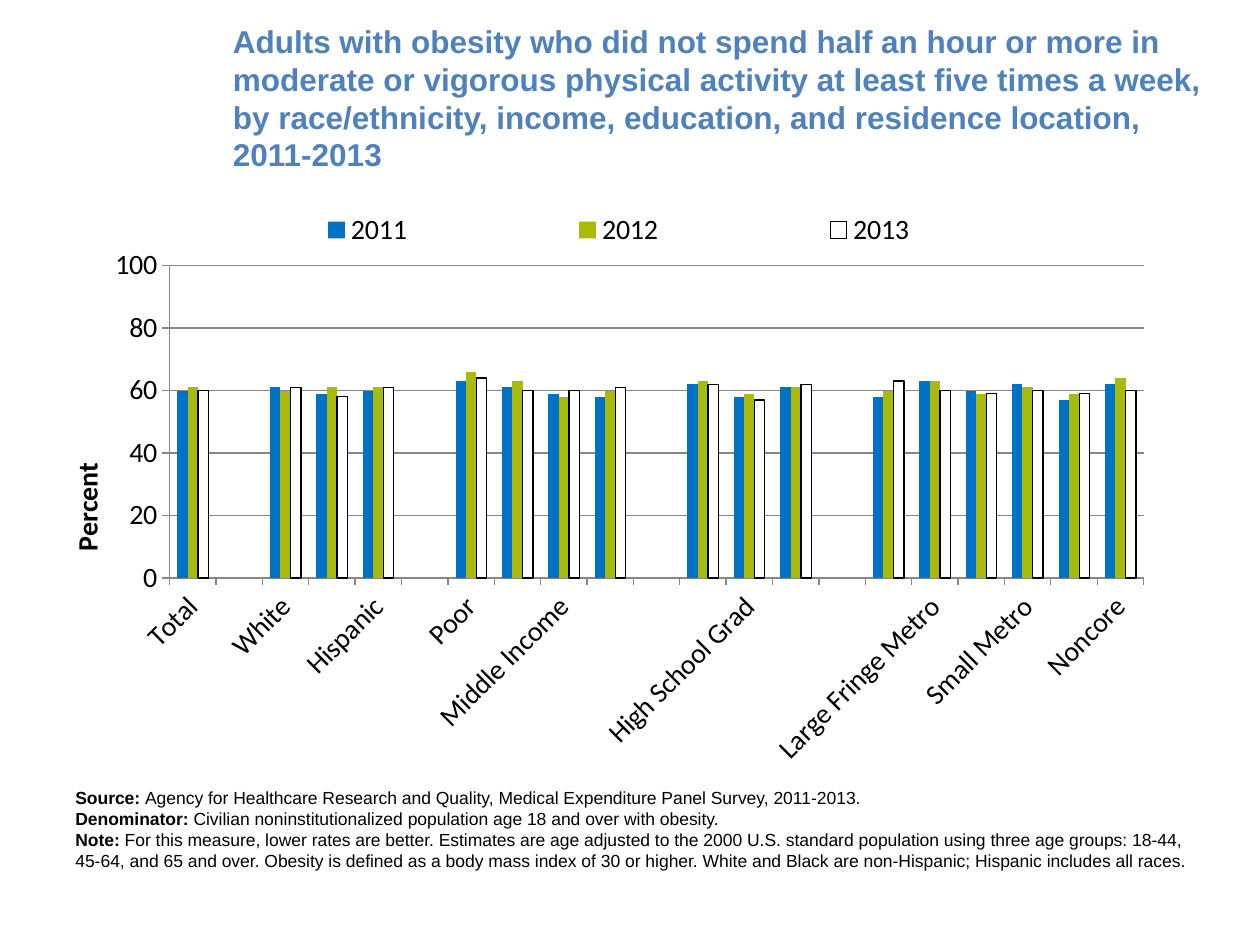
from lxml import etree
from pptx import Presentation
from pptx import util as u
from pptx.chart.data import CategoryChartData
from pptx.dml.color import RGBColor
from pptx.enum import chart as ch
from pptx.enum import text
from pptx.oxml.ns import qn

COLORS = {"title": "4F81BD", "black": "000000", "white": "FFFFFF",
          "2011": "0072C6", "2012": "AABA0A", "2013": "FFFFFF", "grid": "868686"}

TITLE = ("Adults with obesity who did not spend half an hour or more in moderate or "
         "vigorous physical activity at least five times a week, by race/ethnicity, "
         "income, education, and residence location, 2011-2013")

NOTES = [
    ("Source: ", "Agency for Healthcare Research and Quality, Medical Expenditure "
     "Panel Survey, 2011-2013."),
    ("Denominator: ", "Civilian noninstitutionalized population age 18 and over with obesity."),
    ("Note: ", "For this measure, lower rates are better. Estimates are age adjusted to the "
     "2000 U.S. standard population using three age groups: 18-44, 45-64, and 65 and over. "
     "Obesity is defined as a body mass index of 30 or higher. White and Black are "
     "non-Hispanic; Hispanic includes all races."),
]

YEARS = ["2011", "2012", "2013"]
# Each group holds rows of label and one percentage per year.
GROUPS = [
    [("Total", 60, 61, 60)],
    [("White", 61, 60, 61), ("Black", 59, 61, 58), ("Hispanic", 60, 61, 61)],
    [("Poor", 63, 66, 64), ("Low Income", 61, 63, 60),
     ("Middle Income", 59, 58, 60), ("High Income", 58, 60, 61)],
    [("<High School", 62, 63, 62), ("High School Grad", 58, 59, 57),
     ("Any College", 61, 61, 62)],
    [("Large Cental Metro", 58, 60, 63), ("Large Fringe Metro", 63, 63, 60),
     ("Medium Metro", 60, 59, 59), ("Small Metro", 62, 61, 60),
     ("Micropolitan", 57, 59, 59), ("Noncore", 62, 64, 60)],
]


def rgb(name):
    return RGBColor.from_string(COLORS[name])


def set_font(font, size, name="Calibri", color="black", bold=False):
    font.size, font.name, font.bold = u.Pt(size), name, bold
    font.color.rgb = rgb(color)


def add_run(p, content, **fmt):
    r = p.add_run()
    r.text = content
    set_font(r.font, **fmt)


def add_text(s, box, paragraphs, anchor=text.MSO_ANCHOR.TOP, **fmt):
    """Add a text box; each paragraph is a list of (text, bold) runs."""
    tf = s.shapes.add_textbox(*map(u.Inches, box)).text_frame
    tf.word_wrap = True
    tf.vertical_anchor = anchor
    for i, runs in enumerate(paragraphs):
        p = tf.paragraphs[0] if i == 0 else tf.add_paragraph()
        for content, bold in runs:
            add_run(p, content, bold=bold, **fmt)


def set_layout(parent, x, y, w, h, inner=False):
    """Place a chart part by fractions of the chart area."""
    layout = parent.find(qn("c:layout"))
    if layout is None:
        layout = etree.Element(qn("c:layout"))
        before = parent.find(qn("c:legendPos"))
        if before is None:
            parent.insert(0, layout)
        else:
            before.addnext(layout)
    manual = etree.SubElement(layout, qn("c:manualLayout"))
    values = [("layoutTarget", "inner")] if inner else []
    values += [("xMode", "edge"), ("yMode", "edge"), ("x", x), ("y", y), ("w", w), ("h", h)]
    for tag, value in values:
        etree.SubElement(manual, qn(f"c:{tag}")).set("val", str(value))


def chart_data():
    rows = []
    for group in GROUPS:
        if rows:
            rows.append(("",) + (None,) * len(YEARS))
        rows += group
    labels, *columns = zip(*rows)
    data = CategoryChartData(number_format="0")
    data.categories = labels
    for year, values in zip(YEARS, columns):
        data.add_series(year, values)
    return data


def style_axes(chart):
    for axis in (chart.category_axis, chart.value_axis):
        set_font(axis.tick_labels.font, 16)
        axis.major_tick_mark = ch.XL_TICK_MARK.OUTSIDE
        axis.format.line.color.rgb = rgb("grid")
    axis = chart.value_axis
    axis.minimum_scale, axis.maximum_scale, axis.major_unit = 0, 100, 20
    axis.tick_labels.number_format = "0"
    axis.tick_labels.number_format_is_linked = False
    axis.has_major_gridlines = True
    axis.major_gridlines.format.line.color.rgb = rgb("grid")
    add_run(axis.axis_title.text_frame.paragraphs[0], "Percent", size=16, bold=True)


def add_column_chart(s, box):
    chart = s.shapes.add_chart(ch.XL_CHART_TYPE.COLUMN_CLUSTERED,
                               *map(u.Inches, box), chart_data()).chart
    set_font(chart.font, 10, "Arial")
    chart.has_title = False
    chart.has_legend = True
    chart.legend.position = ch.XL_LEGEND_POSITION.TOP
    chart.legend.include_in_layout = False
    set_font(chart.legend.font, 16)
    style_axes(chart)
    plot = chart.plots[0]
    plot.gap_width, plot.overlap, plot.vary_by_categories = 150, 0, False
    for series in plot.series:
        series.invert_if_negative = False
        series.format.fill.solid()
        series.format.fill.fore_color.rgb = rgb(series.name)
    outline = plot.series[-1].format.line
    outline.color.rgb, outline.width = rgb("black"), u.Pt(0.75)
    set_layout(chart.element.find(".//" + qn("c:plotArea")), 0.094, 0.113, 0.859, 0.551, True)
    set_layout(chart.element.find(".//" + qn("c:legend")), 0.09, 0.01, 0.8, 0.08)


def main():
    prs = Presentation()
    prs.slide_width, prs.slide_height = u.Inches(10), u.Inches(7.5)
    s = prs.slides.add_slide(prs.slide_layouts[6])
    s.background.fill.solid()
    s.background.fill.fore_color.rgb = rgb("white")
    add_text(s, (1.75, 0.3, 8.08, 0.95), [[(TITLE, True)]],
             anchor=text.MSO_ANCHOR.MIDDLE, size=18, name="Arial", color="title")
    add_column_chart(s, (0.5, 1.6, 9, 4.5))
    add_text(s, (0.5, 6.2, 9.1, 0.77), [[(label, True), (body, False)] for label, body in NOTES],
             size=10, name="Arial")
    prs.save("out.pptx")


if __name__ == "__main__":
    main()
